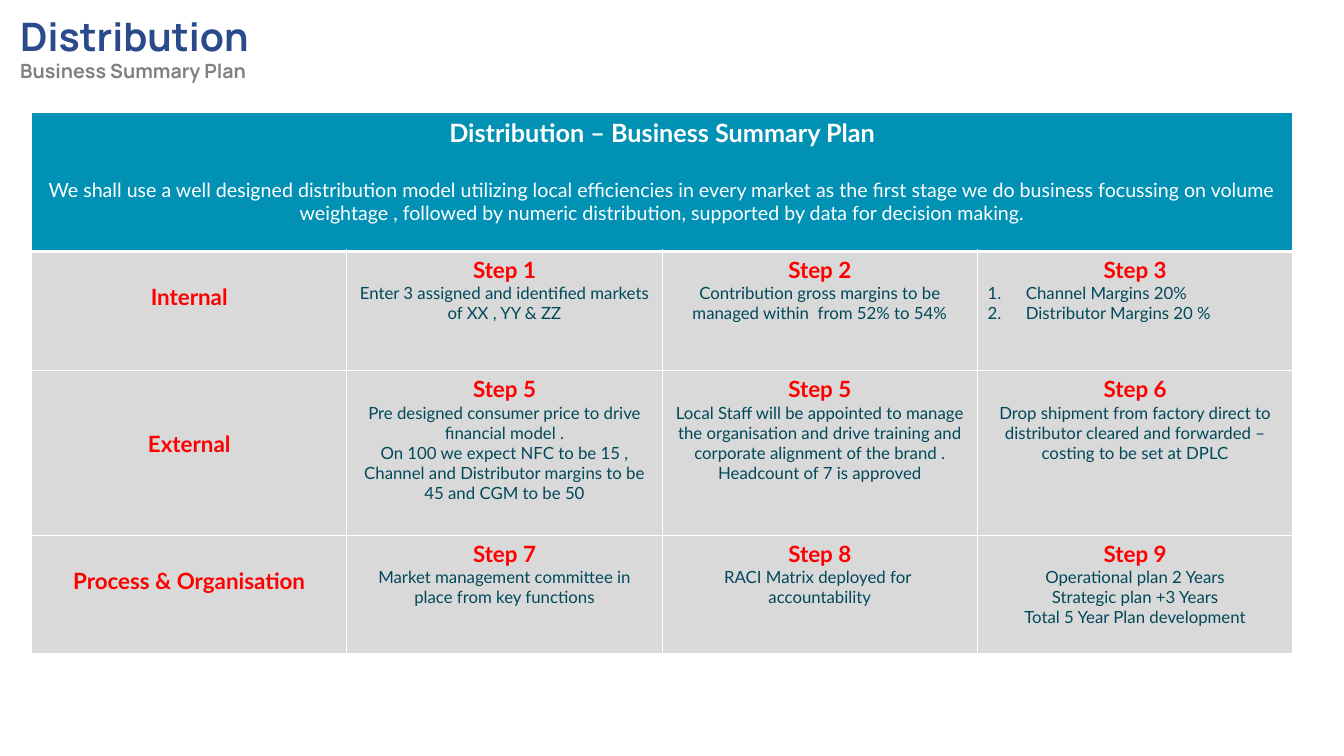
from dataclasses import dataclass

from lxml.etree import SubElement
from pptx import Presentation
from pptx.dml.color import RGBColor
from pptx.enum.text import MSO_ANCHOR, MSO_AUTO_SIZE, PP_ALIGN
from pptx.oxml.ns import qn
from pptx.util import Inches, Length, Pt

WHITE = RGBColor(0xFF, 0xFF, 0xFF)
TEAL = RGBColor(0x00, 0x91, 0xB5)
DARK_TEAL = RGBColor(0x00, 0x48, 0x5A)
LIGHT_GRAY = RGBColor(0xD9, 0xD9, 0xD9)
GRAY = RGBColor(0x80, 0x80, 0x80)
RED = RGBColor(0xFF, 0x00, 0x00)
BLUE = RGBColor(0x2A, 0x4A, 0x8B)

SLIDE_WIDTH, SLIDE_HEIGHT = Inches(13.33), Inches(7.5)
COLUMN_COUNT = 4
HEADER_PERCENT = 18.4
LABEL_LINE_PERCENT = 3.6
NUMBER_INDENT = Inches(0.38)


@dataclass(frozen=True)
class TextStyle:
    size: float
    color: RGBColor
    bold: bool = False
    font: str = "Lato"


@dataclass(frozen=True)
class Step:
    heading: str
    lines: tuple[str, ...]
    numbered: bool = False


@dataclass(frozen=True)
class PlanRow:
    label: str
    label_drop: int
    height_percent: float
    steps: tuple[Step, ...]


TITLE = TextStyle(28, BLUE, True, "Manrope")
SUBTITLE = TextStyle(14, GRAY, True, "Manrope")
TABLE_HEADING = TextStyle(18, WHITE, True)
SUMMARY = TextStyle(14, WHITE)
STEP_HEADING = TextStyle(16, RED, True)
BODY = TextStyle(12, DARK_TEAL)

SUMMARY_TEXT = (
    "We shall use a well designed distribution model utilizing local efficiencies in every "
    "market as the first stage we do business focussing on volume weightage , followed by "
    "numeric distribution, supported by data for decision making."
)

PLAN = (
    PlanRow("Internal", 1, 15.8, (
        Step("Step 1", ("Enter 3 assigned and identified markets of XX , YY & ZZ",)),
        Step("Step 2", ("Contribution gross margins to be managed within  from 52% to 54%",)),
        Step("Step 3", ("Channel Margins 20%", "Distributor Margins 20 %"), numbered=True),
    )),
    PlanRow("External", 2, 21.75, (
        Step("Step 5", (
            "Pre designed consumer price to drive financial model .",
            "On 100 we expect NFC to be 15 , Channel and Distributor margins to be 45 "
            "and CGM to be 50",
        )),
        Step("Step 5", (
            "Local Staff will be appointed to manage the organisation and drive training and "
            "corporate alignment of the brand . Headcount of 7 is approved",
        )),
        Step("Step 6", (
            "Drop shipment from factory direct to distributor cleared and forwarded – "
            "costing to be set at DPLC",
        )),
    )),
    PlanRow("Process & Organisation", 1, 15.7, (
        Step("Step 7", ("Market management committee in place from key functions",)),
        Step("Step 8", ("RACI Matrix deployed for  accountability",)),
        Step("Step 9", (
            "Operational plan 2 Years",
            "Strategic plan +3 Years",
            "Total 5 Year Plan development",
        )),
    )),
)


def across(percent: float) -> Length:
    return Length(round(SLIDE_WIDTH * percent / 100))


def down(percent: float) -> Length:
    return Length(round(SLIDE_HEIGHT * percent / 100))


def write_paragraph(frame, text: str, style: TextStyle, align=PP_ALIGN.CENTER,
                    numbered: bool = False):
    """Fill the frame's first paragraph if it is empty, otherwise add one."""
    paragraph = frame.paragraphs[0] if not frame.text else frame.add_paragraph()
    paragraph.text = text
    paragraph.alignment = align
    if numbered:
        properties = paragraph._p.get_or_add_pPr()
        properties.set("marL", str(NUMBER_INDENT))
        properties.set("indent", str(-NUMBER_INDENT))
        SubElement(properties, qn("a:buFont"), typeface="+mj-lt")
        SubElement(properties, qn("a:buAutoNum"), type="arabicPeriod")
    font = paragraph.font
    font.name, font.size, font.bold = style.font, Pt(style.size), style.bold
    font.color.rgb = style.color
    return paragraph


def format_cell(cell, fill: RGBColor, top_border: float = 1, bottom_border: float = 1) -> None:
    properties = cell._tc.get_or_add_tcPr()
    borders = {"lnL": 1, "lnR": 1, "lnT": top_border, "lnB": bottom_border}
    for tag, width in borders.items():
        line = SubElement(properties, qn(f"a:{tag}"), w=str(Pt(width)))
        solid = SubElement(line, qn("a:solidFill"))
        SubElement(solid, qn("a:srgbClr"), val=str(WHITE))
    cell.fill.solid()
    cell.fill.fore_color.rgb = fill


def add_title(slide) -> None:
    title = slide.shapes.title
    title.left, title.top = across(0.75), down(0.93)
    title.width, title.height = across(25.95), down(11.73)
    frame = title.text_frame
    frame.auto_size = MSO_AUTO_SIZE.NONE
    frame.vertical_anchor = MSO_ANCHOR.TOP
    frame.word_wrap = True
    write_paragraph(frame, "Distribution", TITLE, PP_ALIGN.LEFT)
    subtitle = write_paragraph(frame, "Business Summary Plan", SUBTITLE, PP_ALIGN.LEFT)
    subtitle.space_before = Pt(0)


def fill_header(table) -> None:
    for cell in table.rows[0].cells:
        format_cell(cell, TEAL, bottom_border=3)
    header = table.cell(0, 0)
    header.merge(table.cell(0, COLUMN_COUNT - 1))
    write_paragraph(header.text_frame, "Distribution – Business Summary Plan", TABLE_HEADING)
    summary = write_paragraph(header.text_frame, SUMMARY_TEXT, SUMMARY)
    summary.space_before = Pt(21.6)


def fill_row(cells, row: PlanRow, top_border: float) -> None:
    for cell in cells:
        format_cell(cell, LIGHT_GRAY, top_border)
    label, *step_cells = cells
    label.margin_top = Inches(0.05) + down(LABEL_LINE_PERCENT) * row.label_drop
    write_paragraph(label.text_frame, row.label, STEP_HEADING)
    for cell, step in zip(step_cells, row.steps):
        write_paragraph(cell.text_frame, step.heading, STEP_HEADING)
        align = PP_ALIGN.LEFT if step.numbered else PP_ALIGN.CENTER
        for line in step.lines:
            write_paragraph(cell.text_frame, line, BODY, align, step.numbered)


def add_plan_table(slide) -> None:
    heights = [HEADER_PERCENT, *(row.height_percent for row in PLAN)]
    table = slide.shapes.add_table(
        len(heights), COLUMN_COUNT, across(2.35), down(14.85), across(93.85), down(sum(heights))
    ).table
    table.first_row = table.horz_banding = False
    for table_row, height in zip(table.rows, heights):
        table_row.height = down(height)
    fill_header(table)
    for index, row in enumerate(PLAN, start=1):
        fill_row(list(table.rows[index].cells), row, top_border=3 if index == 1 else 1)


def main() -> None:
    presentation = Presentation()
    presentation.slide_width, presentation.slide_height = SLIDE_WIDTH, SLIDE_HEIGHT
    slide = presentation.slides.add_slide(presentation.slide_layouts[5])
    add_plan_table(slide)
    add_title(slide)
    presentation.save("out.pptx")


if __name__ == "__main__":
    main()
